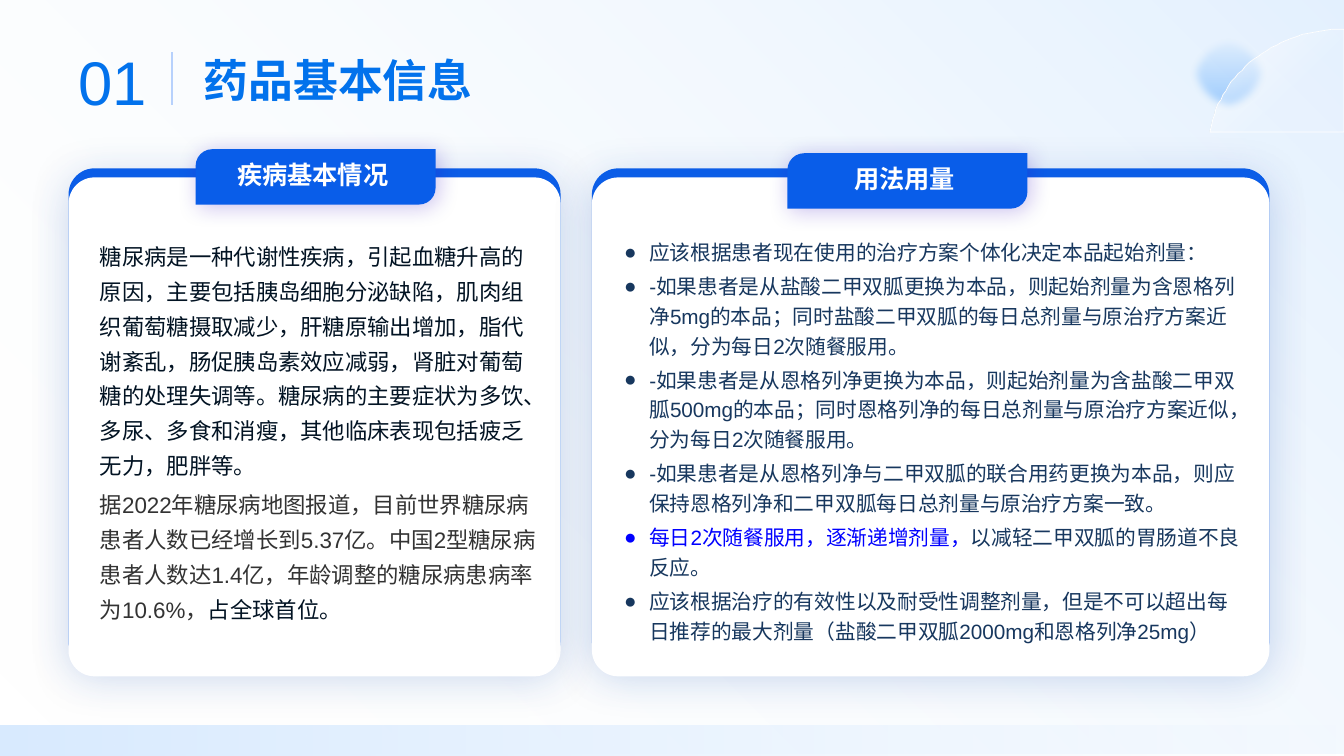
from lxml import etree
from pptx import Presentation
from pptx.dml.color import RGBColor
from pptx.enum.shapes import MSO_CONNECTOR, MSO_SHAPE
from pptx.enum.text import MSO_ANCHOR, MSO_AUTO_SIZE, PP_ALIGN
from pptx.oxml.ns import qn
from pptx.util import Emu, Pt

RECT, OVAL = MSO_SHAPE.RECTANGLE, MSO_SHAPE.OVAL
ROUND, DIAGONAL = MSO_SHAPE.ROUNDED_RECTANGLE, MSO_SHAPE.ROUND_2_DIAG_RECTANGLE
TOP, MIDDLE = MSO_ANCHOR.TOP, MSO_ANCHOR.MIDDLE
LEFT, CENTER = PP_ALIGN.LEFT, PP_ALIGN.CENTER

PX = 9144  # EMU per px, 100 px to the inch
W, H = 1333, 750
FONT = "Arial"
COLORS = {
    "white": "FFFFFF", "title": "0272EC", "divider": "B7D1FC",
    "panel": "095DE9", "glow": "419BFD", "strip": "D9EBFF",
    "panel_shadow": "4472C4", "tab_shadow": "330CC0",
    "ink": "021323", "grey": "333333", "navy": "17375E", "accent": "0000FF",
}
# colour, opacity %, blur pt, distance pt, direction in degrees
PANEL_SHADOW = ("panel_shadow", 15, 30, 4, 90)
TAB_SHADOW = ("tab_shadow", 25, 16, 3, 45)


def px(n):
    return Emu(round(n * PX))


def rgb(name):
    return RGBColor.from_string(COLORS[name])


def add_color(parent, name, opacity):
    clr = etree.SubElement(parent, qn("a:srgbClr"), val=COLORS[name])
    etree.SubElement(clr, qn("a:alpha"), val=str(opacity * 1000))


def add_run(p, text, size=16, color="ink", bold=False):
    r = p.add_run()
    r.text = text
    r.font.name, r.font.size, r.font.bold = FONT, Pt(size), bold
    r.font.color.rgb = rgb(color)


def bezier(p0, p1, p2, p3, steps=32):
    for i in range(1, steps + 1):
        t = i / steps
        u = 1 - t
        yield tuple(u**3 * a + 3 * u * u * t * b + 3 * u * t * t * c + t**3 * d
                    for a, b, c, d in zip(p0, p1, p2, p3))


class SlideBuilder:
    def __init__(self, prs):
        self.slide = prs.slides.add_slide(prs.slide_layouts[5])
        self.shapes = self.slide.shapes

    def style(self, sp, fill=None, stops=None, angle=0, line=None, shadow=None):
        sp.shadow.inherit = False
        if stops:
            sp.fill.gradient()
            sp.fill.gradient_angle = (360 - angle) % 360
            gs_list = sp._element.spPr.find(qn("a:gradFill")).find(qn("a:gsLst"))
            for gs in list(gs_list):
                gs_list.remove(gs)
            for pos, name, opacity in stops:
                gs = etree.SubElement(gs_list, qn("a:gs"), pos=str(pos * 1000))
                add_color(gs, name, opacity)
        else:
            sp.fill.solid()
            sp.fill.fore_color.rgb = rgb(fill)
        if line:
            sp.line.color.rgb = rgb(line)
            sp.line.width = Pt(0.5)
        else:
            sp.line.fill.background()
        if shadow:
            name, opacity, blur, dist, direction = shadow
            effects = sp._element.spPr.find(qn("a:effectLst"))
            outer = etree.SubElement(
                effects, qn("a:outerShdw"), blurRad=str(Pt(blur)), dist=str(Pt(dist)),
                dir=str(direction * 60000), algn="ctr", rotWithShape="0")
            add_color(outer, name, opacity)

    def shape(self, kind, x, y, w, h, adj=None, **look):
        sp = self.shapes.add_shape(kind, px(x), px(y), px(w), px(h))
        if adj is not None:
            sp.adjustments[0] = adj
        self.style(sp, **look)
        return sp

    def outline(self, points, **look):
        fb = self.shapes.build_freeform(*points[0], scale=PX)
        fb.add_line_segments(points[1:], close=True)
        self.style(fb.convert_to_shape(), **look)

    def line(self, x1, y1, x2, y2, color, width):
        ln = self.shapes.add_connector(MSO_CONNECTOR.STRAIGHT, px(x1), px(y1), px(x2), px(y2))
        ln.line.color.rgb = rgb(color)
        ln.line.width = Pt(width)
        etree.SubElement(ln._element.spPr, qn("a:effectLst"))

    def frame(self, sp, anchor=TOP, margins=(0, 0, 0, 0)):
        tf = sp.text_frame
        tf.word_wrap = True
        tf.auto_size = MSO_AUTO_SIZE.NONE
        tf.vertical_anchor = anchor
        tf.margin_left, tf.margin_top, tf.margin_right, tf.margin_bottom = map(px, margins)
        return tf

    def title(self, text, x, y, w, h):
        sp = self.shapes.title
        self.shapes._spTree.append(sp._element)  # bring in front of the backdrop
        sp.left, sp.top, sp.width, sp.height = px(x), px(y), px(w), px(h)
        p = self.frame(sp, MIDDLE).paragraphs[0]
        p.alignment = LEFT
        add_run(p, text, size=32, color="title", bold=True)

    def text(self, paragraphs, x, y, w, h, size=16, spacing=1.0, anchor=TOP,
             margins=(0, 0, 0, 0), bullet=None):
        sp = self.shapes.add_textbox(px(x), px(y), px(w), px(h))
        tf = self.frame(sp, anchor, margins)
        for i, runs in enumerate(paragraphs):
            p = tf.add_paragraph() if i else tf.paragraphs[0]
            p.alignment, p.line_spacing = LEFT, spacing
            if i:
                p.space_before = Pt(3)
            if bullet:
                pPr = p._p.get_or_add_pPr()
                pPr.set("marL", str(px(25)))
                pPr.set("indent", str(px(-25)))
                etree.SubElement(pPr, qn("a:buFont"), typeface=FONT)
                etree.SubElement(pPr, qn("a:buChar"), char=bullet)
            for text, color in runs:
                add_run(p, text, size=size, color=color)

    def panel(self, x, w):
        for y, fill in ((167, "panel"), (176, "white")):
            self.shape(ROUND, x, y, w, 495, adj=0.053, fill=fill, shadow=PANEL_SHADOW)

    def tab(self, text, x, y):
        sp = self.shape(DIAGONAL, x, y, 238, 55, adj=0.301, fill="panel", shadow=TAB_SHADOW)
        p = self.frame(sp, MIDDLE, (4, 0, 10, 5)).paragraphs[0]
        p.alignment = CENTER
        add_run(p, text, size=18, color="white", bold=True)


DISEASE = [
    [("糖尿病是⼀种代谢性疾病，引起血糖升高的原因，主要包括胰岛细胞分泌缺陷，肌肉组织葡萄糖摄取减少，"
      "肝糖原输出增加，脂代谢紊乱，肠促胰岛素效应减弱，肾脏对葡萄糖的处理失调等。"
      "糖尿病的主要症状为多饮、多尿、多食和消瘦，其他临床表现包括疲乏无力，肥胖等。", "ink")],
    [("据2022年糖尿病地图报道，⽬前世界糖尿病患者⼈数已经增长到5.37亿。"
      "中国2型糖尿病患者⼈数达1.4亿，年龄调整的糖尿病患病率为10.6%，", "grey"),
     ("占全球⾸位。", "ink")],
]
DOSAGE = [
    [("应该根据患者现在使用的治疗方案个体化决定本品起始剂量：", "navy")],
    [("-如果患者是从盐酸二甲双胍更换为本品，则起始剂量为含恩格列净5mg的本品；"
      "同时盐酸二甲双胍的每日总剂量与原治疗方案近似，分为每日2次随餐服用。", "navy")],
    [("-如果患者是从恩格列净更换为本品，则起始剂量为含盐酸二甲双胍500mg的本品；"
      "同时恩格列净的每日总剂量与原治疗方案近似，分为每日2次随餐服用。", "navy")],
    [("-如果患者是从恩格列净与二甲双胍的联合用药更换为本品，"
      "则应保持恩格列净和二甲双胍每日总剂量与原治疗方案一致。", "navy")],
    [("每日2次随餐服用，逐渐递增剂量，", "accent"), ("以减轻二甲双胍的胃肠道不良反应。", "navy")],
    [("应该根据治疗的有效性以及耐受性调整剂量，但是不可以超出每日推荐的最大剂量"
      "（盐酸二甲双胍2000mg和恩格列净25mg）", "navy")],
]


def main():
    prs = Presentation()
    prs.slide_width, prs.slide_height = px(W), px(H)
    s = SlideBuilder(prs)

    # Backdrop
    s.shape(RECT, 0, 0, W, 748, stops=[(0, "white", 0), (100, "glow", 15)], angle=315)
    ball = s.shape(OVAL, 1178, 32, 81, 81, stops=[(0, "glow", 0), (100, "glow", 50)], angle=90)
    effects = ball._element.spPr.find(qn("a:effectLst"))
    etree.SubElement(effects, qn("a:softEdge"), rad=str(Pt(6)))
    arc = bezier((1202, 123), (1214, 69), (1268, 29), (W, 29))
    s.outline([(W, 131), (1200, 131), (1202, 123), *arc],
              stops=[(39, "white", 5), (83, "white", 50)], angle=225, line="white")
    s.shape(RECT, 0, 720, W, 30, stops=[(0, "strip", 0), (100, "strip", 100)], angle=180)

    # Heading
    s.title("药品基本信息", 202, 39, 323, 79)
    s.text([[("01", "title")]], 68, 38, 126, 84, size=44, anchor=MIDDLE, margins=(10, 5, 10, 5))
    s.line(171, 52, 171, 104, "divider", 1.5)

    # Disease panel
    s.panel(68, 488)
    s.tab("疾病基本情况", 194, 148)
    s.text(DISEASE, 99, 233, 434, 417, spacing=1.3)

    # Dosage panel
    s.panel(587, 672)
    s.text(DOSAGE, 619, 233, 615, 417, size=14.8, spacing=1.2, bullet="●")
    s.tab("用法用量", 781, 152)

    prs.save("out.pptx")


if __name__ == "__main__":
    main()
